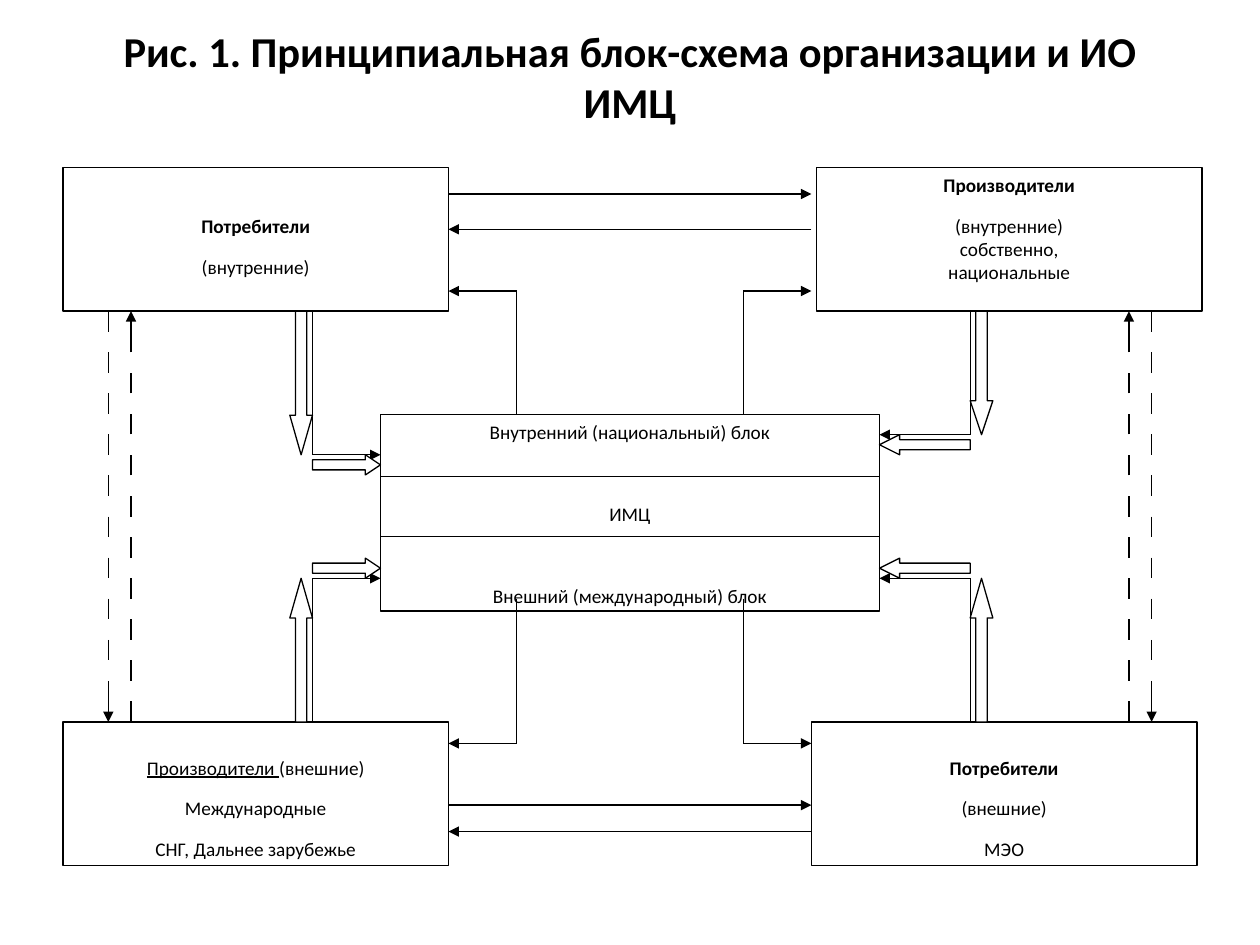
from lxml import etree
from pptx import Presentation
from pptx import util as u
from pptx.dml.color import RGBColor
from pptx.enum import shapes, text
from pptx.oxml import ns

BLACK = RGBColor(0, 0, 0)
WHITE = RGBColor(255, 255, 255)
FONT = "Calibri"
BOX_WIDTH, BOX_HEIGHT = 3.06, 1.14
TOP_ROW, BOTTOM_ROW = 1.33, 5.73
TOP_EDGE = TOP_ROW + BOX_HEIGHT
LEFT_EDGE, RIGHT_EDGE = 3.56, 6.44
CENTER = (3.02, 3.29, 3.96, 1.56)
CENTER_RIGHT = CENTER[0] + CENTER[2]


def add_text(paragraph, content, size=11, bold=False, underline=False):
    run = paragraph.add_run()
    run.text = content
    font = run.font
    font.name, font.size, font.bold, font.underline = FONT, u.Pt(size), bold, underline
    font.color.rgb = BLACK


def add_block(slide, preset, box):
    shape = slide.shapes.add_shape(preset, *map(u.Inches, box))
    shape.shadow.inherit = False
    shape.fill.solid()
    shape.fill.fore_color.rgb = WHITE
    shape.line.color.rgb = BLACK
    shape.line.width = u.Pt(0.75)
    return shape


def add_text_box(slide, box, paragraphs, top=0.05, gaps=()):
    """Each paragraph is a list of (text, format); gaps are points after each one."""
    frame = add_block(slide, shapes.MSO_SHAPE.RECTANGLE, box).text_frame
    frame.word_wrap = True
    frame.vertical_anchor = text.MSO_ANCHOR.TOP
    frame.margin_top = u.Inches(top)
    for index, runs in enumerate(paragraphs):
        paragraph = frame.add_paragraph() if index else frame.paragraphs[0]
        paragraph.alignment = text.PP_ALIGN.CENTER
        paragraph.space_after = u.Pt(gaps[index] if index < len(gaps) else 0)
        for content, style in runs:
            add_text(paragraph, content, **style)


def add_line(slide, start, end, arrow=False):
    line = slide.shapes.add_connector(
        shapes.MSO_CONNECTOR.STRAIGHT, *map(u.Inches, (*start, *end)))
    line.line.color.rgb = BLACK
    line.line.width = u.Pt(0.75)
    if arrow:
        etree.SubElement(line.line._get_or_add_ln(), ns.qn("a:tailEnd"), type="triangle")
    etree.SubElement(line._element.spPr, ns.qn("a:effectLst"))


def add_elbow(slide, start, end):
    """Vertical line, then a horizontal arrow."""
    corner = (start[0], end[1])
    add_line(slide, start, corner)
    add_line(slide, corner, end, arrow=True)


def add_dashed_arrow(slide, x, start, end):
    """Nine dashes with equal gaps, then an arrow two dashes long."""
    step = (end - start) / 20
    for index in range(0, 18, 2):
        add_line(slide, (x, start + index * step), (x, start + (index + 1) * step))
    add_line(slide, (x, end - 2 * step), (x, end), arrow=True)


def add_block_arrow(slide, preset, box, head):
    arrow = add_block(slide, preset, box)
    arrow.adjustments[0] = 0.5
    arrow.adjustments[1] = head


def add_title(slide, box):
    title = slide.shapes.title
    title.left, title.top, title.width, title.height = map(u.Inches, box)
    frame = title.text_frame
    frame.auto_size = text.MSO_AUTO_SIZE.NONE
    frame.word_wrap = True
    frame.vertical_anchor = text.MSO_ANCHOR.TOP
    frame.margin_top = 0
    frame.margin_left = frame.margin_right = u.Inches(0.2)
    paragraph = frame.paragraphs[0]
    paragraph.alignment = text.PP_ALIGN.CENTER
    add_text(paragraph, "Рис. 1. Принципиальная блок-схема организации и ИО ИМЦ",
             size=24.3, bold=True)


def add_participants(slide):
    bold, plain = {"bold": True}, {}
    size = (BOX_WIDTH, BOX_HEIGHT)
    add_text_box(slide, (0.5, TOP_ROW, *size),
                 [[("Потребители", bold)], [("(внутренние)", plain)]],
                 top=0.37, gaps=(10,))
    add_text_box(slide, (6.48, TOP_ROW, *size),
                 [[("Производители", bold)], [("(внутренние)", plain)],
                  [("собственно,", plain)], [("национальные", plain)]], gaps=(10,))
    add_text_box(slide, (0.5, BOTTOM_ROW, *size),
                 [[("Производители ", {"underline": True}), ("(внешние)", plain)],
                  [("Международные", plain)], [("СНГ, Дальнее зарубежье", plain)]],
                 top=0.27, gaps=(10, 10))
    add_text_box(slide, (RIGHT_EDGE, BOTTOM_ROW, *size),
                 [[("Потребители", bold)], [("(внешние)", plain)], [("МЭО", plain)]],
                 top=0.27, gaps=(10, 10))


def add_center(slide, box):
    left, top, width, _ = box
    names = ("Внутренний (национальный) блок", "ИМЦ", "Внешний (международный) блок")
    add_text_box(slide, box, [[(name, {})] for name in names], gaps=(33.4, 33.4))
    for offset in (0.49, 0.97):
        add_line(slide, (left, top + offset), (left + width, top + offset))


def add_thin_links(slide):
    for right_y, left_y in ((1.54, 1.82), (6.39, 6.6)):
        add_line(slide, (LEFT_EDGE, right_y), (RIGHT_EDGE, right_y), arrow=True)
        add_line(slide, (RIGHT_EDGE, left_y), (LEFT_EDGE, left_y), arrow=True)
    for start_y, end_y in ((4.75, 5.9), (CENTER[1], 2.31)):
        for x, edge in ((4.1, LEFT_EDGE), (5.9, RIGHT_EDGE)):
            add_elbow(slide, (x, start_y), (edge, end_y))
    for down_x, up_x in ((0.86, 1.04), (9.14, 8.96)):
        add_dashed_arrow(slide, down_x, TOP_EDGE, BOTTOM_ROW)
        add_dashed_arrow(slide, up_x, BOTTOM_ROW, TOP_EDGE)


def add_center_links(slide):
    """Thin elbows with block arrows beside them, on both sides of the centre."""
    preset = shapes.MSO_SHAPE
    sides = (
        (2.48, CENTER[0], 2.3, preset.RIGHT_ARROW, 0.75, 3.61, 1.75),
        (7.7, CENTER_RIGHT, 7.7, preset.LEFT_ARROW, 1, 3.45, 1.5),
    )
    lower_y, thickness = 4.59, 0.16
    for x, edge, block_x, sideways, side_head, upper_y, down_head in sides:
        add_elbow(slide, (x, TOP_EDGE), (edge, upper_y))
        add_elbow(slide, (x, BOTTOM_ROW), (edge, lower_y))
        for y in (upper_y, lower_y - thickness):
            add_block_arrow(slide, sideways,
                            (min(x, edge), y, abs(x - edge), thickness), side_head)
        add_block_arrow(slide, preset.DOWN_ARROW,
                        (block_x, TOP_EDGE, 0.18, upper_y - TOP_EDGE), down_head)
        add_block_arrow(slide, preset.UP_ARROW,
                        (block_x, lower_y, 0.18, BOTTOM_ROW - lower_y), 1.75)


def main():
    presentation = Presentation()
    presentation.slide_width, presentation.slide_height = u.Inches(10), u.Inches(7.5)
    slide = presentation.slides.add_slide(presentation.slide_layouts[5])
    add_title(slide, (0.5, 0.2, 9, 1.25))
    add_participants(slide)
    add_center(slide, CENTER)
    add_thin_links(slide)
    add_center_links(slide)
    presentation.save("out.pptx")


if __name__ == "__main__":
    main()
